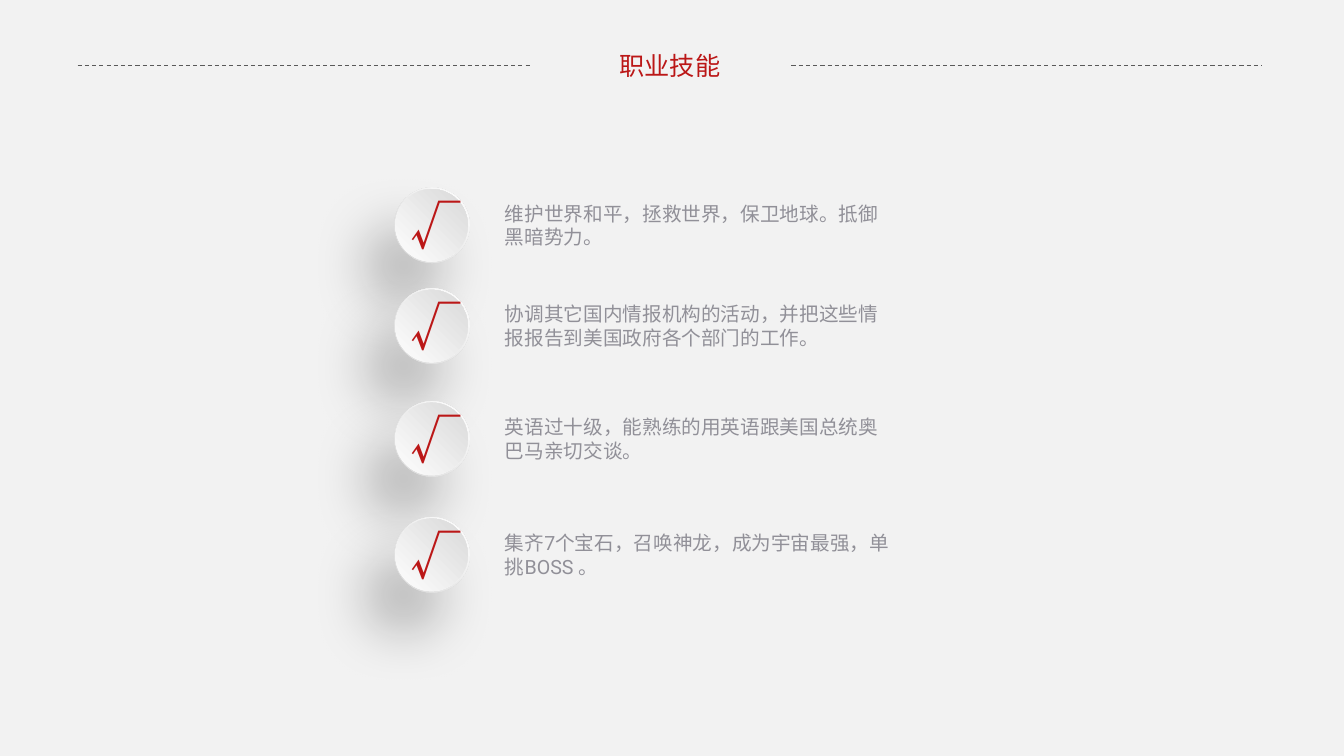
from lxml import etree
from pptx import Presentation
from pptx.dml.color import RGBColor
from pptx.enum.dml import MSO_LINE
from pptx.enum.shapes import MSO_CONNECTOR, MSO_SHAPE
from pptx.enum.text import MSO_ANCHOR, MSO_AUTO_SIZE, PP_ALIGN
from pptx.oxml.ns import qn
from pptx.util import Inches, Pt

COLORS = {
    "background": "F2F2F2",
    "red": "BB1717",
    "grey": "919098",
    "rule": "595959",
    "white": "FFFFFF",
    "silver": "D9D9D9",
    "pearl": "FEFEFE",
    "shadow": "000000",
}
TITLE_FONT = {"name": "Lato", "size": Pt(18), "bold": False}
SKILL_FONT = {"name": "Roboto", "size": Pt(14)}
CHECK_FONT = {"name": "Noto Sans CJK SC", "size": Pt(36)}

SKILLS = [
    (1.86, "维护世界和平，拯救世界，保卫地球。抵御黑暗势力。"),
    (2.86, "协调其它国内情报机构的活动，并把这些情报报告到美国政府各个部门的工作。"),
    (3.98, "英语过十级，能熟练的用英语跟美国总统奥巴马亲切交谈。"),
    (5.13, "集齐7个宝石，召唤神龙，成为宇宙最强，单挑BOSS 。"),
]


def rgb(name):
    return RGBColor.from_string(COLORS[name])


def place(shape, left, top, width, height):
    box = {"left": left, "top": top, "width": width, "height": height}
    for name, value in box.items():
        setattr(shape, name, Inches(value))


def write(shape, text, font_format, color, alignment=PP_ALIGN.LEFT, wrap=True):
    frame = shape.text_frame
    frame_format = {
        "word_wrap": wrap,
        "auto_size": MSO_AUTO_SIZE.SHAPE_TO_FIT_TEXT,
        "vertical_anchor": MSO_ANCHOR.TOP,
    }
    for name, value in frame_format.items():
        setattr(frame, name, value)
    paragraph = frame.paragraphs[0]
    paragraph.alignment = alignment
    run = paragraph.add_run()
    run.text = text
    for name, value in font_format.items():
        setattr(run.font, name, value)
    run.font.color.rgb = rgb(color)
    properties = run.font._element
    properties.set("lang", "zh-CN")
    east_asian = etree.SubElement(properties, qn("a:ea"))
    east_asian.set("typeface", font_format["name"])


def add_text(slide, left, top, width, height, *text_format):
    box = slide.shapes.add_textbox(0, 0, 0, 0)
    write(box, *text_format)
    place(box, left, top, width, height)


def add_dashed_rule(slide, start, end, y):
    rule = slide.shapes.add_connector(
        MSO_CONNECTOR.STRAIGHT, Inches(start), Inches(y), Inches(end), Inches(y))
    rule.line.color.rgb = rgb("rule")
    rule.line.width = Pt(0.75)
    rule.line.dash_style = MSO_LINE.DASH
    etree.SubElement(rule._element.spPr, qn("a:effectLst"))


def add_disc(group, left, top, size, colors):
    """Add a circle with a radial gradient centred on its top right corner."""
    disc = group.shapes.add_shape(
        MSO_SHAPE.OVAL, Inches(left), Inches(top), Inches(size), Inches(size))
    disc.shadow.inherit = False
    disc.line.fill.background()
    disc.fill.gradient()
    for stop, position, color in zip(disc.fill.gradient_stops, (0, 1), colors):
        stop.position = position
        stop.color.rgb = rgb(color)
    gradient = disc._element.spPr.find(qn("a:gradFill"))
    linear = gradient.find(qn("a:lin"))
    radial = etree.Element(qn("a:path"), {"path": "circle"})
    etree.SubElement(radial, qn("a:fillToRect"), {"l": "100000", "b": "100000"})
    gradient.replace(linear, radial)
    return disc


def add_soft_shadow(shape):
    effects = shape._element.spPr.find(qn("a:effectLst"))
    shadow = etree.SubElement(effects, qn("a:outerShdw"), {
        "blurRad": str(Pt(41)),
        "dist": str(Pt(35)),
        "dir": str(126 * 60000),
        "rotWithShape": "0",
    })
    color = etree.SubElement(shadow, qn("a:srgbClr"), {"val": COLORS["shadow"]})
    etree.SubElement(color, qn("a:alpha"), {"val": "25000"})


def add_skill(slide, top, text):
    add_text(slide, 4.91, top + 0.09, 4.02, 0.57, text, SKILL_FONT, "grey")
    button = slide.shapes.add_group_shape()
    rim = add_disc(button, 3.91, top, 0.75, ("white", "silver"))
    add_soft_shadow(rim)
    add_disc(button, 3.92, top + 0.015, 0.72, ("silver", "pearl"))
    add_text(slide, 3.97, top + 0.03, 0.26, 0.71, "√", CHECK_FONT, "red")


def main():
    presentation = Presentation()
    presentation.slide_width = Inches(13.33)
    presentation.slide_height = Inches(7.5)
    slide = presentation.slides.add_slide(presentation.slide_layouts[5])
    slide.background.fill.solid()
    slide.background.fill.fore_color.rgb = rgb("background")

    title = slide.shapes.title
    place(title, 6.04, 0.45, 1.21, 0.4)
    write(title, "职业技能", TITLE_FONT, "red", PP_ALIGN.CENTER, False)
    for start, end in ((0.77, 5.26), (7.85, 12.52)):
        add_dashed_rule(slide, start, end, 0.65)
    for top, text in SKILLS:
        add_skill(slide, top, text)

    presentation.save("out.pptx")


if __name__ == "__main__":
    main()
